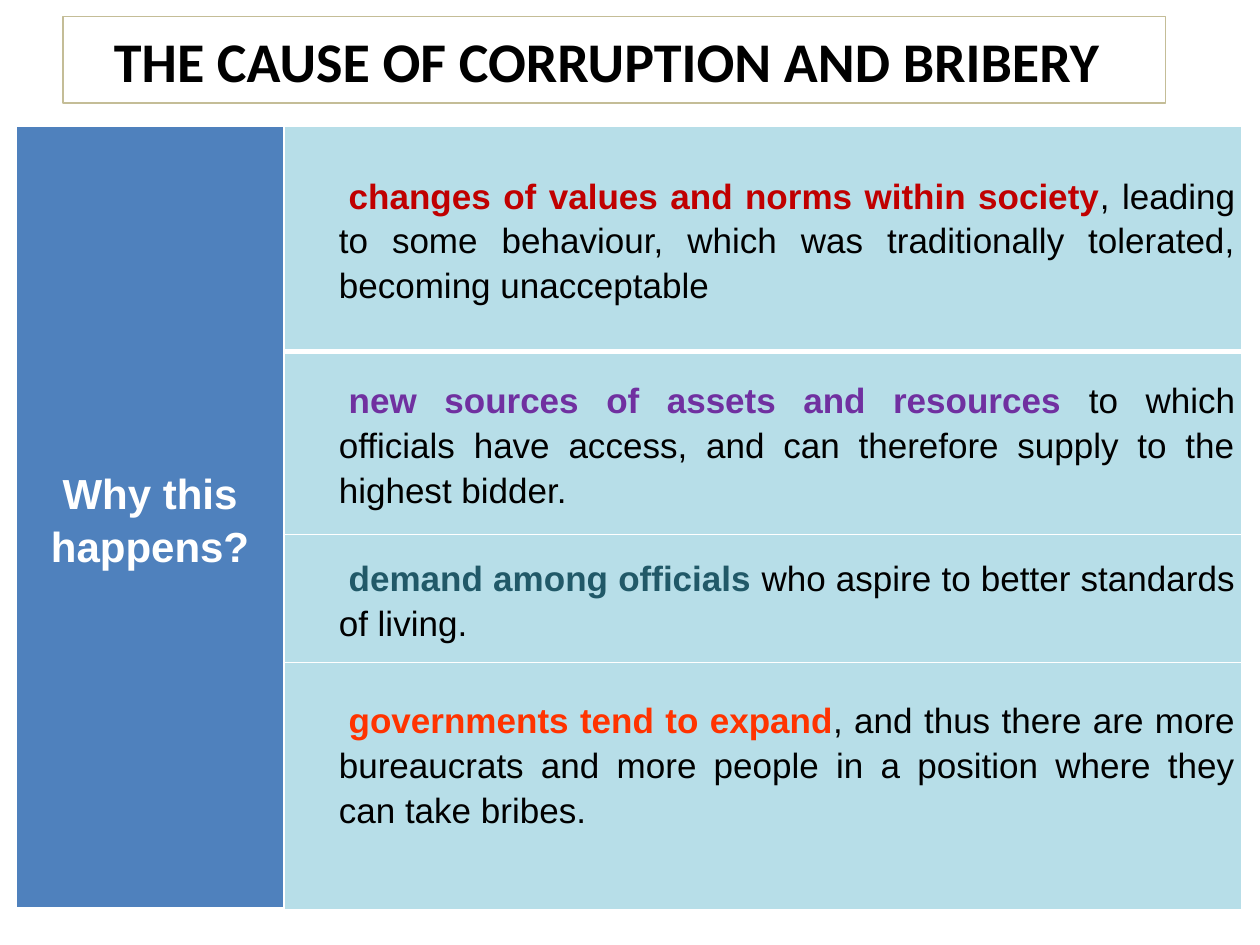
from lxml import etree
from pptx import Presentation
from pptx.dml.color import RGBColor
from pptx.enum.text import MSO_ANCHOR, PP_ALIGN
from pptx.oxml.ns import qn
from pptx.util import Cm, Pt

CENTER, JUSTIFY = PP_ALIGN.CENTER, PP_ALIGN.JUSTIFY
MIDDLE = MSO_ANCHOR.MIDDLE

BLACK = RGBColor(0x00, 0x00, 0x00)
WHITE = RGBColor(0xFF, 0xFF, 0xFF)
TAN = RGBColor(0xC4, 0xBD, 0x97)
BLUE = RGBColor(0x4F, 0x81, 0xBD)
PALE_BLUE = RGBColor(0xB7, 0xDE, 0xE8)
RED = RGBColor(0xC0, 0x00, 0x00)
PURPLE = RGBColor(0x70, 0x30, 0xA0)
TEAL = RGBColor(0x21, 0x59, 0x68)
ORANGE = RGBColor(0xFF, 0x33, 0x00)

# Content
TITLE = "THE CAUSE OF CORRUPTION AND BRIBERY"
QUESTION = "Why this happens?"
# Key phrase, its colour, rest of the sentence, row height in cm
CAUSES = [
    ("changes of values and norms within society", RED,
     ", leading to some behaviour, which was traditionally tolerated, "
     "becoming unacceptable", 4.55),
    ("new sources of assets and resources ", PURPLE,
     "to which officials have access, and can therefore supply to the "
     "highest bidder.", 3.68),
    ("demand among officials ", TEAL,
     "who aspire to better standards of living.", 2.59),
    ("governments tend to expand", ORANGE,
     ", and thus there are more bureaucrats and more people in a position "
     "where they can take bribes.", 4.98),
]
COLUMN_WIDTHS = (5.41, 19.3)


def add_run(paragraph, text, size, color, bold, font="Arial"):
    run = paragraph.add_run()
    run.text = text
    run.font.name = font
    run.font.size = Pt(size)
    run.font.bold = bold
    run.font.color.rgb = color


def set_borders(cell, bottom_width):
    properties = cell._tc.get_or_add_tcPr()
    widths = {"a:lnL": 1, "a:lnR": 1, "a:lnT": 1, "a:lnB": bottom_width}
    for position, (tag, width) in enumerate(widths.items()):
        line = etree.Element(qn(tag), w=str(Pt(width)))
        fill = etree.SubElement(line, qn("a:solidFill"))
        etree.SubElement(fill, qn("a:srgbClr"), val=str(WHITE))
        properties.insert(position, line)


def format_cell(cell, color, bottom_width):
    cell.fill.solid()
    cell.fill.fore_color.rgb = color
    cell.vertical_anchor = MIDDLE
    cell.margin_left = cell.margin_right = Cm(0.13)
    cell.margin_top = cell.margin_bottom = 0
    set_borders(cell, bottom_width)


presentation = Presentation()
presentation.slide_width = Cm(25.4)
presentation.slide_height = Cm(19.05)
slide = presentation.slides.add_slide(presentation.slide_layouts[5])

# Title
title = slide.shapes.title
title.left, title.top = Cm(1.27), Cm(0.33)
title.width, title.height = Cm(22.23), Cm(1.75)
title.line.color.rgb = TAN
title.line.width = Pt(0.75)
title.text_frame.vertical_anchor = MIDDLE
title.text_frame.margin_right = Cm(0.55)
paragraph = title.text_frame.paragraphs[0]
paragraph.alignment = CENTER
add_run(paragraph, TITLE, 32, BLACK, True, "Calibri")

# Table of causes
table = slide.shapes.add_table(
    len(CAUSES), 2, Cm(0.32), Cm(2.54),
    Cm(sum(COLUMN_WIDTHS)), Cm(sum(cause[3] for cause in CAUSES))).table
for column, width in zip(table.columns, COLUMN_WIDTHS):
    column.width = Cm(width)

for index, (phrase, color, rest, height) in enumerate(CAUSES):
    table.rows[index].height = Cm(height)
    bottom_width = 3 if index == 0 else 1
    format_cell(table.cell(index, 0), BLUE, bottom_width)
    cell = table.cell(index, 1)
    format_cell(cell, PALE_BLUE, bottom_width)
    paragraph = cell.text_frame.paragraphs[0]
    paragraph.alignment = JUSTIFY
    paragraph.line_spacing = 1.15
    # The first line starts slightly to the right of the others
    indents = paragraph._p.get_or_add_pPr()
    indents.set("marL", str(Cm(0.97)))
    indents.set("indent", str(Cm(0.2)))
    add_run(paragraph, phrase, 20, color, True)
    add_run(paragraph, rest, 20, BLACK, False)

# The last cause sits above the middle of its row
cell.margin_bottom = Cm(0.91)

# Question beside all the causes
question = table.cell(0, 0)
question.merge(table.cell(len(CAUSES) - 1, 0))
paragraph = question.text_frame.paragraphs[0]
paragraph.alignment = CENTER
paragraph.line_spacing = 1.15
add_run(paragraph, QUESTION, 24, WHITE, True)

presentation.save("out.pptx")
